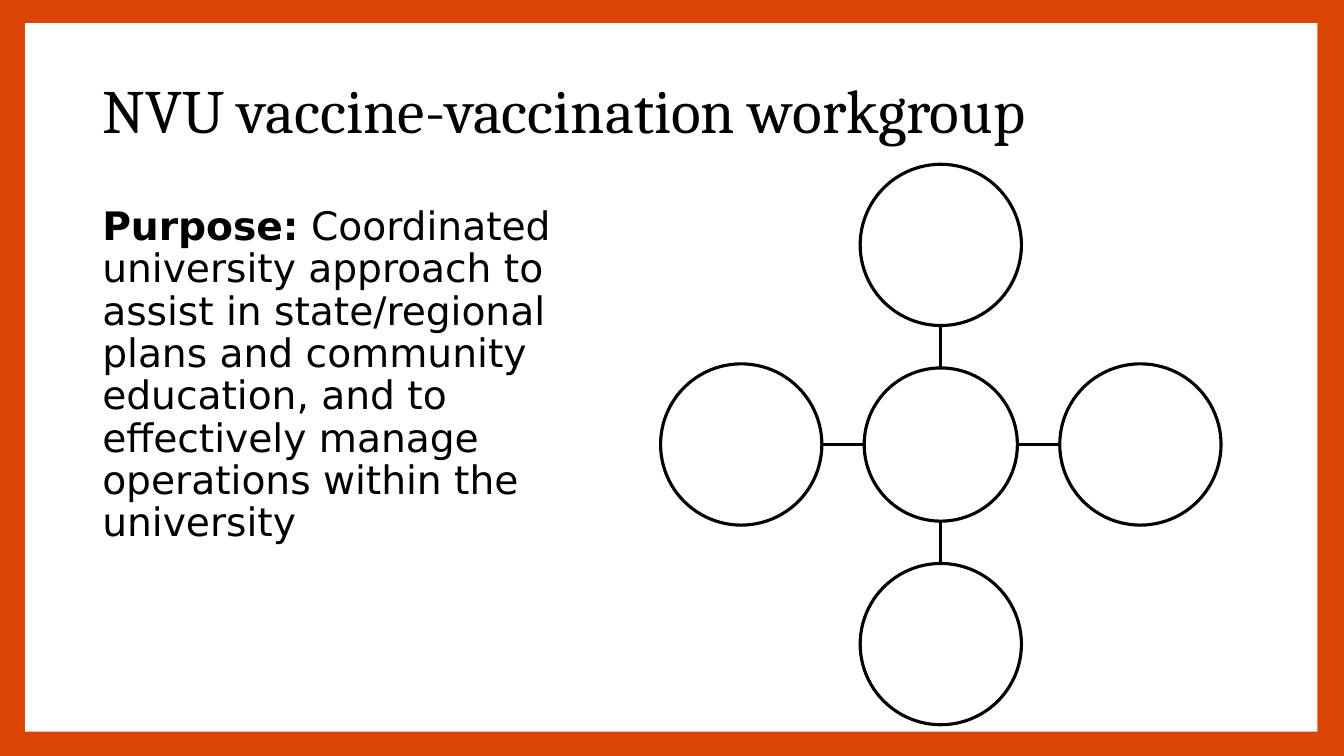
import dataclasses
import typing

import pptx
import pptx.dml.color
import pptx.enum.shapes
import pptx.enum.text
import pptx.oxml
import pptx.util
import pptx.oxml.ns

SLIDE_WIDTH = pptx.util.Inches(13.33)
SLIDE_HEIGHT = pptx.util.Inches(7.5)
COLUMNS, ROWS = 160, 90
TITLE_ONLY_LAYOUT = 5
COLORS = {"border": "DC4405", "paper": "FFFFFF", "ink": "000000"}
LINE_WIDTH = 2.25


@dataclasses.dataclass(frozen=True)
class Box:
    column: float
    row: float
    columns: float
    rows: float


@dataclasses.dataclass(frozen=True)
class Run:
    text: str
    bold: bool = False


@dataclasses.dataclass(frozen=True)
class Circle:
    column: float
    row: float
    diameter: float


@dataclasses.dataclass(frozen=True)
class Spoke:
    across: int
    down: int


FRAME = Box(3, 2.76, 153.84, 84.36)
TITLE = Box(11, 4.8, 138, 17.4)
PURPOSE = Box(11, 24, 65.76, 57.12)
HUB = Circle(112, 52.92, 18.24)
SATELLITE_DIAMETER = 19.2
SATELLITE_DISTANCE = 23.76
SPOKES = [Spoke(0, -1), Spoke(1, 0), Spoke(0, 1), Spoke(-1, 0)]

TITLE_RUNS = [Run("NVU vaccine-vaccination workgroup")]
PURPOSE_RUNS = [
    Run("Purpose:", bold=True),
    Run(
        " Coordinated university approach to assist in state/regional plans "
        "and community education, and to effectively manage operations "
        "within the university"
    ),
]
TITLE_FONT = {"name": "Cambria", "size": pptx.util.Pt(44)}
PURPOSE_FONT = {"name": "DejaVu Sans", "size": pptx.util.Pt(28)}
PARAGRAPH_FORMAT = {
    "alignment": pptx.enum.text.PP_ALIGN.LEFT,
    "line_spacing": 0.9,
}
TEXT_FRAME_FORMAT = {
    "word_wrap": True,
    "auto_size": pptx.enum.text.MSO_AUTO_SIZE.NONE,
}


def across(columns: float) -> int:
    return round(SLIDE_WIDTH * columns / COLUMNS)


def down(rows: float) -> int:
    return round(SLIDE_HEIGHT * rows / ROWS)


def color(name: str) -> pptx.dml.color.RGBColor:
    return pptx.dml.color.RGBColor.from_string(COLORS[name])


def apply(target: typing.Any, values: dict[str, typing.Any]) -> None:
    for name, value in values.items():
        setattr(target, name, value)


def bounds(box: Box) -> tuple[int, int, int, int]:
    return across(box.column), down(box.row), across(box.columns), down(box.rows)


def write(
    shape: typing.Any,
    runs: list[Run],
    font: dict[str, typing.Any],
    anchor: pptx.enum.text.MSO_ANCHOR,
    space_before: float,
) -> None:
    apply(shape.text_frame, TEXT_FRAME_FORMAT | {"vertical_anchor": anchor})
    paragraph = shape.text_frame.paragraphs[0]
    spacing = {"space_before": pptx.util.Pt(space_before)}
    apply(paragraph, PARAGRAPH_FORMAT | spacing)
    for item in runs:
        run = paragraph.add_run()
        run.text = item.text
        apply(run.font, font | {"bold": item.bold})
        run.font.color.rgb = color("ink")


def outline(line: typing.Any) -> None:
    line.color.rgb = color("ink")
    line.width = pptx.util.Pt(LINE_WIDTH)


def add_plain_shape(
    slide: typing.Any, kind: pptx.enum.shapes.MSO_SHAPE, box: Box
) -> typing.Any:
    shape = slide.shapes.add_shape(kind, *bounds(box))
    shape.shadow.inherit = False
    shape.fill.solid()
    shape.fill.fore_color.rgb = color("paper")
    return shape


def add_frame(slide: typing.Any) -> None:
    frame = add_plain_shape(slide, pptx.enum.shapes.MSO_SHAPE.RECTANGLE, FRAME)
    frame.line.fill.background()
    slide.shapes.title.element.addprevious(frame.element)


def add_title(slide: typing.Any) -> None:
    title = slide.shapes.title
    apply(title, dict(zip(("left", "top", "width", "height"), bounds(TITLE))))
    write(title, TITLE_RUNS, TITLE_FONT, pptx.enum.text.MSO_ANCHOR.MIDDLE, 0)


def add_purpose(slide: typing.Any) -> None:
    textbox = slide.shapes.add_textbox(*bounds(PURPOSE))
    write(textbox, PURPOSE_RUNS, PURPOSE_FONT, pptx.enum.text.MSO_ANCHOR.TOP, 10)


def add_circle(slide: typing.Any, circle: Circle) -> None:
    radius = circle.diameter / 2
    box = Box(
        circle.column - radius, circle.row - radius, circle.diameter, circle.diameter
    )
    shape = add_plain_shape(slide, pptx.enum.shapes.MSO_SHAPE.OVAL, box)
    outline(shape.line)


def add_spoke(slide: typing.Any, spoke: Spoke) -> None:
    def point(distance: float) -> tuple[float, float]:
        return HUB.column + spoke.across * distance, HUB.row + spoke.down * distance

    start = point(HUB.diameter / 2)
    end = point(SATELLITE_DISTANCE - SATELLITE_DIAMETER / 2)
    connector = slide.shapes.add_connector(
        pptx.enum.shapes.MSO_CONNECTOR.STRAIGHT,
        across(start[0]),
        down(start[1]),
        across(end[0]),
        down(end[1]),
    )
    outline(connector.line)
    properties = connector.element.find(pptx.oxml.ns.qn("p:spPr"))
    properties.append(
        properties.makeelement(pptx.oxml.ns.qn("a:effectLst"), {})
    )
    add_circle(slide, Circle(*point(SATELLITE_DISTANCE), SATELLITE_DIAMETER))


def main() -> None:
    presentation = pptx.Presentation()
    apply(presentation, {"slide_width": SLIDE_WIDTH, "slide_height": SLIDE_HEIGHT})
    slide = presentation.slides.add_slide(
        presentation.slide_layouts[TITLE_ONLY_LAYOUT]
    )
    slide.background.fill.solid()
    slide.background.fill.fore_color.rgb = color("border")
    add_frame(slide)
    add_title(slide)
    add_purpose(slide)
    add_circle(slide, HUB)
    for spoke in SPOKES:
        add_spoke(slide, spoke)
    presentation.save("out.pptx")


if __name__ == "__main__":
    main()
